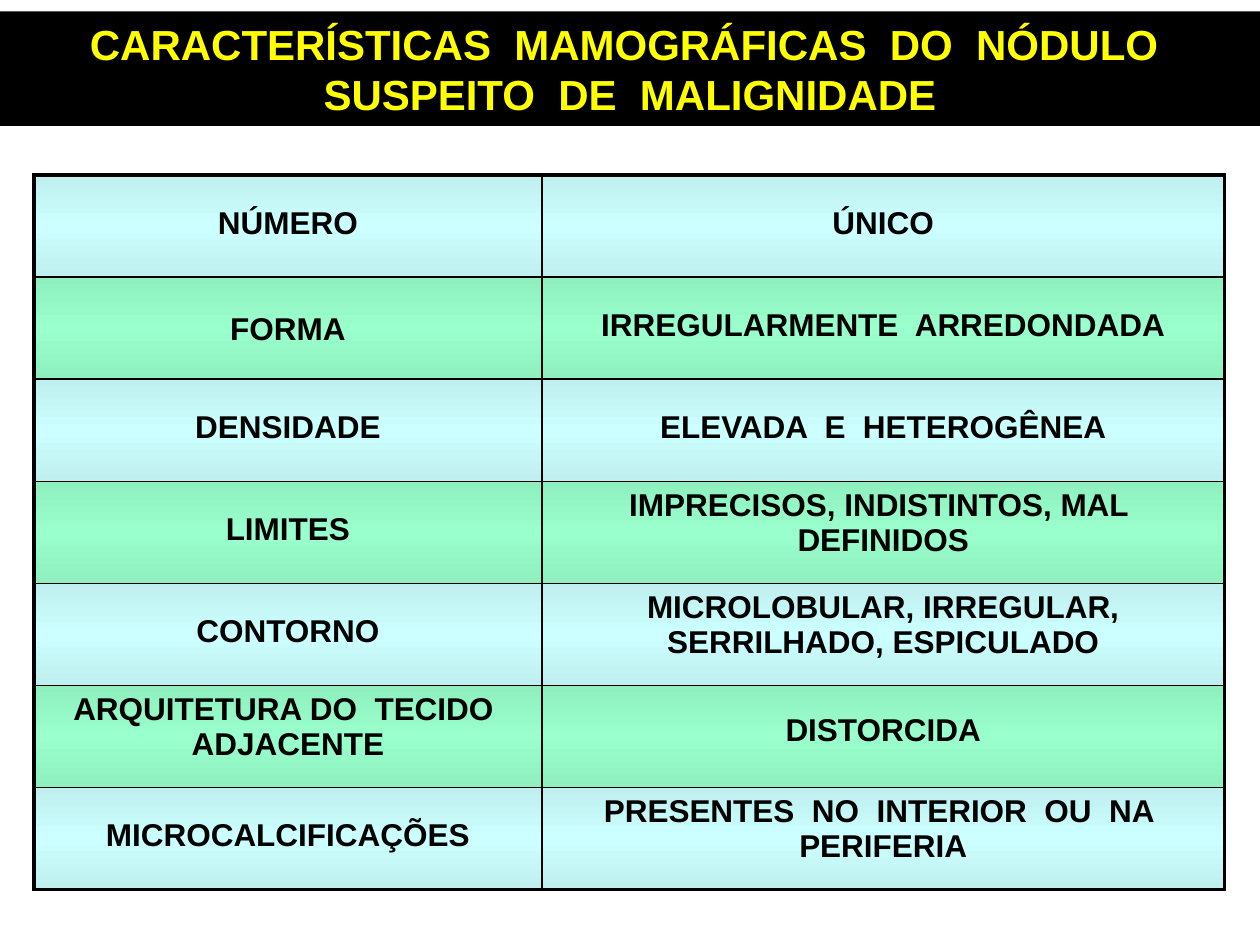
"""Build a slide with a table of mammographic features of a suspicious nodule."""
from lxml import etree
from pptx import Presentation
from pptx.dml.color import RGBColor
from pptx.enum.text import MSO_ANCHOR, PP_ALIGN
from pptx.oxml.ns import qn
from pptx.util import Inches, Pt

CENTER = PP_ALIGN.CENTER
MIDDLE = MSO_ANCHOR.MIDDLE
BLACK = RGBColor(0x00, 0x00, 0x00)
YELLOW = RGBColor(0xFF, 0xFF, 0x00)
BLUE_EDGE = RGBColor(0xBF, 0xEF, 0xEF)
BLUE = RGBColor(0xCC, 0xFF, 0xFF)
GREEN_EDGE = RGBColor(0x8F, 0xEF, 0xBF)
GREEN = RGBColor(0x99, 0xFF, 0xCC)
BANDS = [(BLUE_EDGE, BLUE), (GREEN_EDGE, GREEN)]
THIN, THICK = Pt(1), Pt(2.25)

FEATURES = [
    [("NÚMERO", 1.7), ("ÚNICO", 1.7)],
    [("FORMA", 1.8), ("IRREGULARMENTE  ARREDONDADA", 1.7)],
    [("DENSIDADE", 1.7), ("ELEVADA  E  HETEROGÊNEA", 1.7)],
    [("LIMITES", 1.7), ("IMPRECISOS, INDISTINTOS, MAL  DEFINIDOS", 1)],
    [("CONTORNO", 1.7), ("MICROLOBULAR, IRREGULAR, SERRILHADO, ESPICULADO", 1)],
    [("ARQUITETURA DO  TECIDO  ADJACENTE", 1), ("DISTORCIDA", 1.6)],
    [("MICROCALCIFICAÇÕES", 1.7), ("PRESENTES  NO  INTERIOR  OU  NA  PERIFERIA", 1)],
]


def style_text(para, size, color):
    para.alignment = CENTER
    para.font.name = "Arial"
    para.font.size = Pt(size)
    para.font.bold = True
    para.font.color.rgb = color


def style_cell(cell, widths, edge, middle):
    props = cell._tc.get_or_add_tcPr()
    for side, width in widths.items():
        line = etree.SubElement(props, qn(f"a:{side}"), w=str(width))
        solid = etree.SubElement(line, qn("a:solidFill"))
        etree.SubElement(solid, qn("a:srgbClr"), val=str(BLACK))
    gradient = etree.SubElement(props, qn("a:gradFill"), rotWithShape="1")
    stops = etree.SubElement(gradient, qn("a:gsLst"))
    for position, color in ((0, edge), (50000, middle), (100000, edge)):
        stop = etree.SubElement(stops, qn("a:gs"), pos=str(position))
        etree.SubElement(stop, qn("a:srgbClr"), val=str(color))
    etree.SubElement(gradient, qn("a:lin"), ang="5400000", scaled="1")


deck = Presentation()
deck.slide_width = Inches(10)
deck.slide_height = Inches(7.5)
page = deck.slides.add_slide(deck.slide_layouts[5])

title = page.shapes.title
title.left, title.top = Inches(0), Inches(0.09)
title.width, title.height = Inches(10), Inches(0.91)
title.fill.solid()
title.fill.fore_color.rgb = BLACK
title.text_frame.text = "CARACTERÍSTICAS  MAMOGRÁFICAS  DO  NÓDULO  SUSPEITO  DE  MALIGNIDADE"
title.text_frame.vertical_anchor = MIDDLE
style_text(title.text_frame.paragraphs[0], 24, YELLOW)

row_count = len(FEATURES)
table = page.shapes.add_table(
    row_count, 2, Inches(0.27), Inches(1.39), Inches(9.45), Inches(5.67)
).table
table.first_row = False
table.horz_banding = False
table.columns[0].width = Inches(4.03)
table.columns[1].width = Inches(5.42)

for row, entries in enumerate(FEATURES):
    table.rows[row].height = Inches(0.81)
    for column, (text, spacing) in enumerate(entries):
        cell = table.cell(row, column)
        cell.text = text
        para = cell.text_frame.paragraphs[0]
        style_text(para, 18, BLACK)
        para.line_spacing = float(spacing)
        widths = {
            "lnL": THICK if column == 0 else THIN,
            "lnR": THICK if column == 1 else THIN,
            "lnT": THICK if row == 0 else THIN,
            "lnB": THICK if row == row_count - 1 else THIN,
        }
        style_cell(cell, widths, *BANDS[row % 2])

deck.save("out.pptx")
